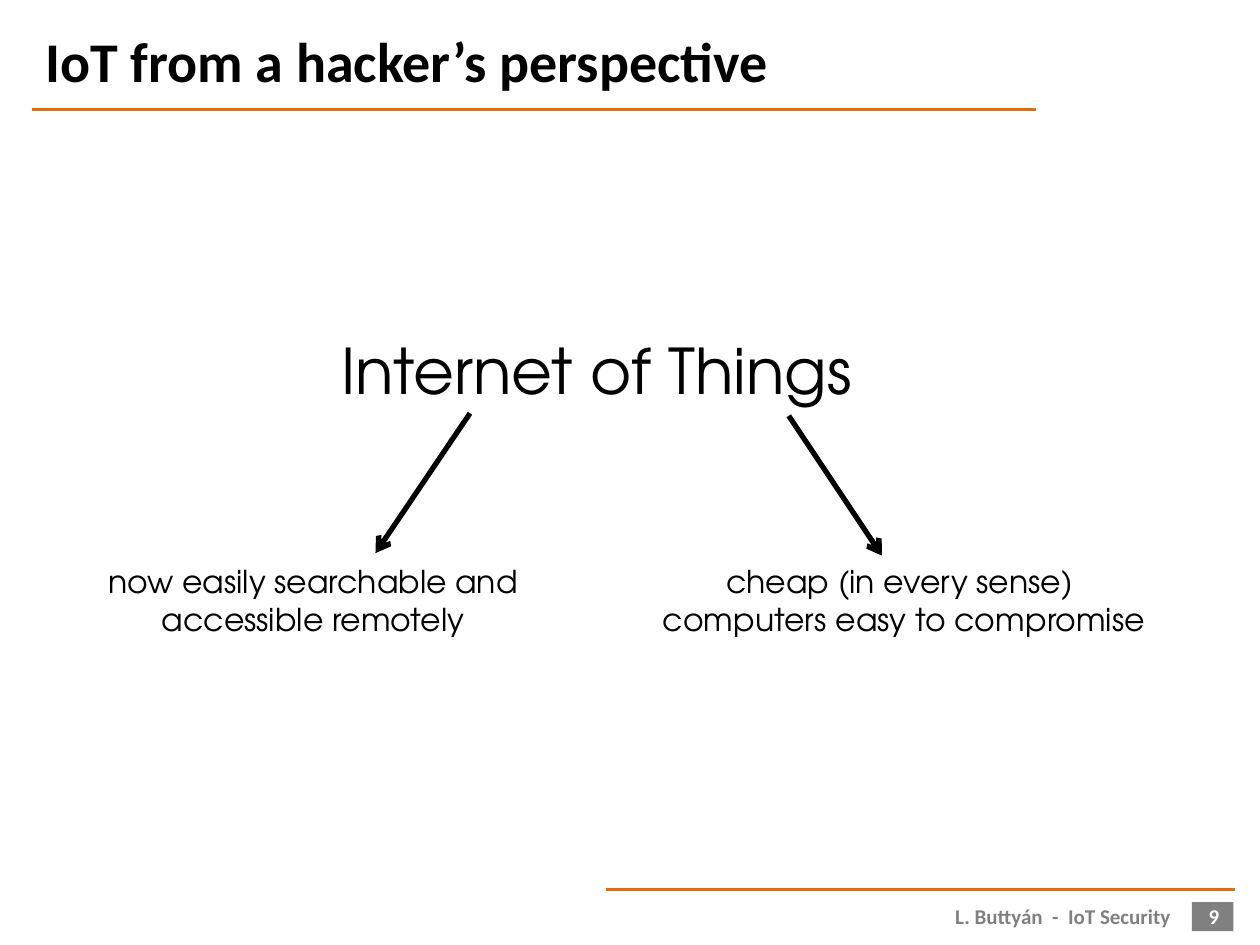
from pptx import Presentation
from pptx.dml.color import RGBColor
from pptx.enum.shapes import MSO_CONNECTOR as Connector, MSO_SHAPE as Shape
from pptx.enum.text import MSO_ANCHOR as Anchor, PP_ALIGN as Align
from pptx.oxml.ns import qn
from pptx.util import Inches, Pt
from lxml.etree import SubElement

COLORS = {"text": "000000", "accent": "E46C0A", "muted": "808080", "light": "FFFFFF"}
HEADING_FONT = "Calibri"
BODY_FONT = "TeX Gyre Adventor"


class SlideBuilder:
    """Draws styled elements on the current slide."""

    def __init__(self, deck):
        self.slide = deck.slides.add_slide(deck.slide_layouts[5])

    def color(self, name):
        return RGBColor.from_string(COLORS[name])

    def fill_text(self, frame, content, size, font, color="text", bold=False,
                  align=Align.LEFT, anchor=Anchor.TOP, wrap=True):
        frame.text = content
        frame.word_wrap = wrap
        frame.vertical_anchor = anchor
        for paragraph in frame.paragraphs:
            paragraph.alignment = align
            for run in paragraph.runs:
                run.font.size = Pt(size)
                run.font.name = font
                run.font.bold = bold
                run.font.color.rgb = self.color(color)

    def title(self, content, left, top, width, height):
        heading = self.slide.shapes.title
        heading.left, heading.top = Inches(left), Inches(top)
        heading.width, heading.height = Inches(width), Inches(height)
        self.fill_text(heading.text_frame, content, 32, HEADING_FONT, bold=True,
                       anchor=Anchor.MIDDLE)

    def text(self, content, left, top, width, height, size, font, **style):
        box = self.slide.shapes.add_textbox(
            Inches(left), Inches(top), Inches(width), Inches(height))
        self.fill_text(box.text_frame, content, size, font, **style)

    def block(self, left, top, width, height, color):
        block = self.slide.shapes.add_shape(
            Shape.RECTANGLE, Inches(left), Inches(top), Inches(width), Inches(height))
        block.shadow.inherit = False
        block.fill.solid()
        block.fill.fore_color.rgb = self.color(color)
        block.line.fill.background()

    def line(self, start, end, color, weight, arrow=False):
        line = self.slide.shapes.add_connector(
            Connector.STRAIGHT, *map(Inches, start + end))
        line.line.color.rgb = self.color(color)
        line.line.width = Pt(weight)
        properties = line._element.spPr
        if arrow:
            SubElement(properties.find(qn("a:ln")), qn("a:tailEnd"), type="arrow")
        SubElement(properties, qn("a:effectLst"))


def main():
    deck = Presentation()
    deck.slide_width, deck.slide_height = Inches(10), Inches(7.5)
    page = SlideBuilder(deck)

    page.line((0.25, 0.87), (8.22, 0.87), "accent", 1.5)
    page.line((4.81, 7.06), (9.8, 7.06), "accent", 1.5)
    page.block(9.46, 7.16, 0.33, 0.23, "muted")
    page.title("IoT from a hacker’s perspective", 0.26, 0.13, 7.97, 0.69)

    page.text("Internet of Things", 2.61, 2.58, 4.6, 0.71, 36, BODY_FONT, wrap=False)
    branches = [
        ("cheap (in every sense) \ncomputers easy to compromise",
         4.94, 4.47, (6.26, 3.3), (7, 4.41)),
        ("now easily searchable and\naccessible remotely",
         0.59, 3.79, (3.73, 3.28), (2.98, 4.39)),
    ]
    for consequence, left, width, start, end in branches:
        page.text(consequence, left, 4.41, width, 0.77, 18, BODY_FONT,
                  align=Align.CENTER, wrap=False)
        page.line(start, end, "text", 3, arrow=True)

    footer = [
        ("L. Buttyán  -  IoT Security", 4.81, 4.58, "muted", Align.RIGHT),
        ("9", 9.4, 0.47, "light", Align.CENTER),
    ]
    for content, left, width, color, align in footer:
        page.text(content, left, 7.11, width, 0.32, 12, HEADING_FONT, color=color,
                  bold=True, align=align, anchor=Anchor.MIDDLE)

    deck.save("out.pptx")


if __name__ == "__main__":
    main()
